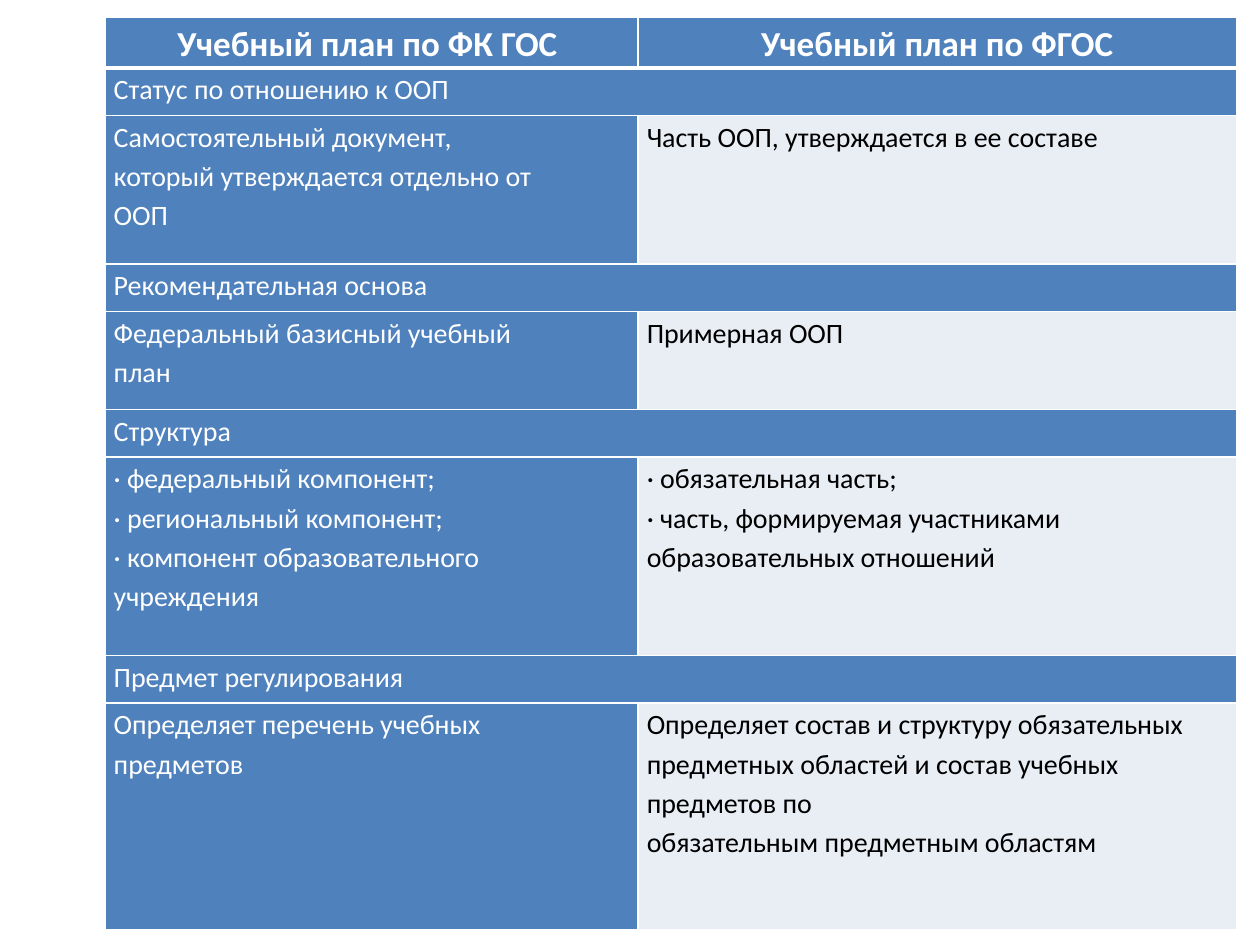
from dataclasses import dataclass

from lxml import etree
from pptx import Presentation
from pptx.dml.color import RGBColor
from pptx.enum.text import PP_ALIGN
from pptx.oxml.ns import qn
from pptx.table import Table, _Cell
from pptx.util import Pt

LEFT, CENTER = PP_ALIGN.LEFT, PP_ALIGN.CENTER
COLORS = {"blue": "4F81BD", "pale": "E9EDF4", "white": "FFFFFF", "black": "000000"}
COLUMN_WIDTHS = (304.6, 342)
HEADER_HEIGHT, TITLE_HEIGHT = 29.2, 27.1
CELL_MARGINS = {"margin_left": 5, "margin_right": 5, "margin_top": 0, "margin_bottom": 0}
TABLE_FLAGS = {"first_row": True, "horz_banding": False}


@dataclass(frozen=True)
class CellStyle:
    fill: str = "blue"
    color: str = "white"
    size: float = 16
    bold: bool = False
    align: PP_ALIGN = LEFT
    bottom_border: float = 1


@dataclass(frozen=True)
class Section:
    title: str
    old_plan: str
    new_plan: str
    height: float


HEADER = CellStyle(size=20, bold=True, align=CENTER, bottom_border=3)
BLUE_CELL = CellStyle()
PALE_CELL = CellStyle(fill="pale", color="black")

HEADINGS = ("Учебный план по ФК ГОС ", "Учебный план по ФГОС")
SECTIONS = (
    Section(
        "Статус по отношению к ООП",
        "Самостоятельный документ,\nкоторый утверждается отдельно от\nООП",
        "Часть ООП, утверждается в ее составе",
        84.9,
    ),
    Section(
        "Рекомендательная основа",
        "Федеральный базисный учебный\nплан",
        "Примерная ООП",
        56.1,
    ),
    Section(
        "Структура",
        "· федеральный компонент;\n· региональный компонент;\n"
        "· компонент образовательного\nучреждения",
        "· обязательная часть;\n"
        "· часть, формируемая участниками образовательных отношений",
        113.6,
    ),
    Section(
        "Предмет регулирования",
        "Определяет перечень учебных\nпредметов",
        "Определяет состав и структуру обязательных\n"
        "предметных областей и состав учебных предметов по\n"
        "обязательным предметным областям",
        129.4,
    ),
)


def add_borders(cell: _Cell, bottom: float) -> None:
    """Outline a cell in white."""
    properties = cell._tc.get_or_add_tcPr()
    for side, width in {"L": 1, "R": 1, "T": 1, "B": bottom}.items():
        line = etree.SubElement(properties, qn(f"a:ln{side}"), w=str(Pt(width)))
        line_fill = etree.SubElement(line, qn("a:solidFill"))
        etree.SubElement(line_fill, qn("a:srgbClr"), val=COLORS["white"])


def fill_cell(cell: _Cell, text: str, style: CellStyle) -> None:
    """Write and format one cell."""
    add_borders(cell, style.bottom_border)
    cell.fill.solid()
    cell.fill.fore_color.rgb = RGBColor.from_string(COLORS[style.fill])
    for margin, value in CELL_MARGINS.items():
        setattr(cell, margin, Pt(value))
    cell.text_frame.text = text
    font_format = {"name": "Calibri", "size": Pt(style.size), "bold": style.bold}
    for paragraph in cell.text_frame.paragraphs:
        paragraph.alignment = style.align
        paragraph.line_spacing = 1.15
        for font in [paragraph.font] + [run.font for run in paragraph.runs]:
            for attribute, value in font_format.items():
                setattr(font, attribute, value)
            font.color.rgb = RGBColor.from_string(COLORS[style.color])


def fill_section(table: Table, title_row: int, section: Section) -> None:
    """Fill a merged title row and the comparison row below it."""
    table.rows[title_row].height = Pt(TITLE_HEIGHT)
    table.rows[title_row + 1].height = Pt(section.height)
    title_cell, spanned_cell = (table.cell(title_row, column) for column in (0, 1))
    title_cell.merge(spanned_cell)
    fill_cell(title_cell, section.title, BLUE_CELL)
    fill_cell(spanned_cell, "", BLUE_CELL)
    fill_cell(table.cell(title_row + 1, 0), section.old_plan, BLUE_CELL)
    fill_cell(table.cell(title_row + 1, 1), section.new_plan, PALE_CELL)


def main() -> None:
    """Build the curriculum comparison slide."""
    presentation = Presentation()
    presentation.slide_width, presentation.slide_height = Pt(720), Pt(540)
    slide = presentation.slides.add_slide(presentation.slide_layouts[6])

    table_height = HEADER_HEIGHT + sum(TITLE_HEIGHT + s.height for s in SECTIONS)
    comparison = slide.shapes.add_table(
        1 + 2 * len(SECTIONS), len(COLUMN_WIDTHS),
        Pt(60), Pt(9.6), Pt(sum(COLUMN_WIDTHS)), Pt(table_height),
    ).table
    for flag, value in TABLE_FLAGS.items():
        setattr(comparison, flag, value)
    comparison.rows[0].height = Pt(HEADER_HEIGHT)
    for column, (width, heading) in enumerate(zip(COLUMN_WIDTHS, HEADINGS)):
        comparison.columns[column].width = Pt(width)
        fill_cell(comparison.cell(0, column), heading, HEADER)
    for index, section in enumerate(SECTIONS):
        fill_section(comparison, 1 + 2 * index, section)

    presentation.save("out.pptx")


if __name__ == "__main__":
    main()
